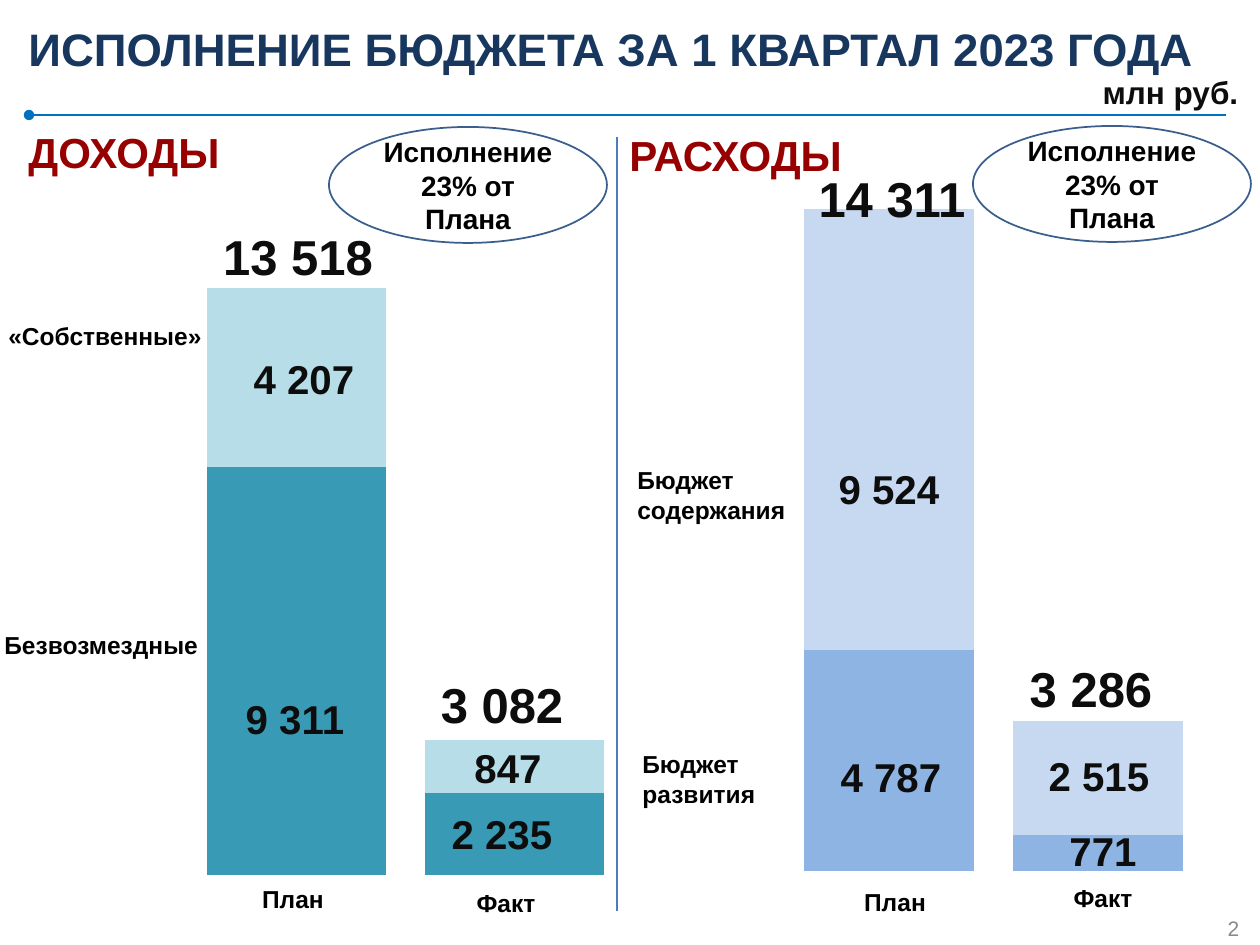
from lxml.etree import SubElement
from pptx import Presentation
from pptx.chart.data import CategoryChartData
from pptx.dml.color import RGBColor
from pptx.enum.chart import XL_CHART_TYPE as ChartType
from pptx.enum.shapes import MSO_CONNECTOR as Connector, MSO_SHAPE as Shape
from pptx.enum.text import MSO_ANCHOR as Anchor, PP_ALIGN as Align
from pptx.oxml import parse_xml
from pptx.oxml.ns import nsdecls, qn
from pptx.util import Pt

EMU_PER_PX = 914400 / 126
BLACK, INK, RED = "000000", "0D0D0D", "960000"

INCOME = {
    "heading": ("ДОХОДЫ", 16, 0),
    "ellipse": (329, 7, 278, 116),
    "chart": (178, 53, 455, 716),
    "layout": (0.02, 0.07, 0.96, 0.91),
    "maximum": 160,
    "gap": 22,
    "series": [((100, 20), "399AB5"), ((44, 13), "B7DEE8")],
    "totals": [("13 518", 298, 136), ("3 082", 502, 584)],
    "values": [("4 207", 304, 258), ("9 311", 295, 598),
               ("847", 508, 647), ("2 235", 502, 713)],
    "columns": [("План", 293, 779), ("Факт", 506, 783)],
    "rows": [("«Собственные»", -4, 186, 237), ("Безвозмездные", -8, 495, 237)],
}
SPENDING = {
    "heading": ("РАСХОДЫ", 0, 3),
    "ellipse": (356, 6, 278, 116),
    "chart": (167, 56, 455, 709),
    "layout": (0, 0.04, 0.92, 0.94),
    "maximum": 151,
    "gap": 23,
    "series": [((50, 8), "8EB4E3"), ((100, 26), "C6D9F1")],
    "totals": [("14 311", 275, 78), ("3 286", 474, 568)],
    "values": [("9 524", 272, 368), ("4 787", 274, 656),
               ("2 515", 482, 655), ("771", 486, 730)],
    "columns": [("План", 278, 782), ("Факт", 486, 778)],
    "rows": [("Бюджет\nсодержания", 8, 345, 179), ("Бюджет развития", 13, 629, 156)],
}


def px(*lengths):
    """Turn pixel lengths into a list of EMU."""
    return [round(length * EMU_PER_PX) for length in lengths]


def color(hex_string):
    """Turn a hex string into a colour."""
    return RGBColor.from_string(hex_string)


def write(shape, text, size=14, fill=BLACK, bold=True, align=Align.CENTER,
          anchor=Anchor.MIDDLE, wrap=True):
    """Fill a shape with text, one paragraph a line."""
    frame = shape.text_frame
    frame.word_wrap = wrap
    frame.vertical_anchor = anchor
    frame.text = text
    for paragraph in frame.paragraphs:
        paragraph.alignment = align
        font = paragraph.runs[0].font
        font.name, font.size, font.bold = "Arial", Pt(size), bold
        font.color.rgb = color(fill)


def add_text(slide, box, text, **style):
    """Add a text box at a pixel box."""
    write(slide.shapes.add_textbox(*px(*box)), text, **style)


def add_labels(slide, left, top, extent, labels, **style):
    """Add text boxes of one extent, centred on points relative to a corner."""
    width, height = extent
    for text, x, y in labels:
        box = (left + x - width / 2, top + y - height / 2, width, height)
        add_text(slide, box, text, **style)


def add_line(slide, start, end, stroke, weight, head=None):
    """Draw a straight line without shadow."""
    line = slide.shapes.add_connector(Connector.STRAIGHT, *px(*start, *end))
    line.line.color.rgb = color(stroke)
    line.line.width = Pt(weight)
    properties = line._element.spPr
    if head:
        SubElement(properties.find(qn("a:ln")), qn("a:headEnd"), type=head)
    SubElement(properties, qn("a:effectLst"))


def add_ellipse(slide, box, text):
    """Add the outlined ellipse with the execution rate."""
    ellipse = slide.shapes.add_shape(Shape.OVAL, *px(*box))
    ellipse.shadow.inherit = False
    ellipse.fill.solid()
    ellipse.fill.fore_color.rgb = color("FFFFFF")
    ellipse.line.color.rgb = color("3A5F8C")
    ellipse.line.width = Pt(1)
    write(ellipse, text, size=16)


def set_plot_layout(chart, layout):
    """Fix the inner plot area as fractions of the chart."""
    plot_area = chart._chartSpace.chart.plotArea
    for old in plot_area.findall(qn("c:layout")):
        plot_area.remove(old)
    sizes = "".join(f'<c:{name} val="{value}"/>' for name, value in zip("xywh", layout))
    plot_area.insert(0, parse_xml(
        f'<c:layout {nsdecls("c")}><c:manualLayout><c:layoutTarget val="inner"/>'
        f'<c:xMode val="edge"/><c:yMode val="edge"/>{sizes}'
        '</c:manualLayout></c:layout>'))


def add_stacked_chart(slide, box, series, gap, maximum, layout):
    """Add a stacked column chart with hidden axes."""
    data = CategoryChartData(number_format="#,##0")
    data.categories = ["1", "2"]
    for number, (values, _) in enumerate(series, 1):
        data.add_series(f"Series {number}", values)
    chart = slide.shapes.add_chart(ChartType.COLUMN_STACKED, *px(*box), data).chart
    chart.has_legend = chart.has_title = False
    chart.font.name, chart.font.size = "Calibri", Pt(10)
    chart.font.color.rgb = color(BLACK)
    chart.category_axis.visible = chart.value_axis.visible = False
    chart.value_axis.has_major_gridlines = False
    chart.value_axis.minimum_scale = 0
    chart.value_axis.maximum_scale = maximum
    plot = chart.plots[0]
    plot.gap_width, plot.overlap, plot.vary_by_categories = gap, 100, False
    for bars, (_, fill) in zip(plot.series, series):
        bars.format.fill.solid()
        bars.format.fill.fore_color.rgb = color(fill)
    set_plot_layout(chart, layout)


def add_header(slide, left, top, width):
    """Add the title, the unit and the rule below them."""
    add_text(slide, (left, top - 3, width, 102), "ИСПОЛНЕНИЕ БЮДЖЕТА ЗА 1 КВАРТАЛ 2023 ГОДА",
             size=26, fill="17375E", align=Align.LEFT)
    add_text(slide, (left + 1055, top + 57, 199, 69), "млн руб.", size=18, fill=INK)
    add_line(slide, (left + 13, top + 115), (left + 1210, top + 115), "0070C0", 1.25, "oval")


def add_panel(slide, left, top, panel):
    """Add one half of the budget: chart, labels, heading and rate."""
    def place(x, y, *size):
        """Move a box from the panel to the slide."""
        return (left + x, top + y, *size)

    add_stacked_chart(slide, place(*panel["chart"]), panel["series"],
                      panel["gap"], panel["maximum"], panel["layout"])
    heading, x, y = panel["heading"]
    add_text(slide, place(x, y, 241, 63), heading, size=24, fill=RED,
             align=Align.LEFT, anchor=Anchor.TOP, wrap=False)
    add_labels(slide, left, top, (200, 50), panel["totals"], size=28, fill=INK)
    add_labels(slide, left, top, (170, 88), panel["values"], size=23, fill=INK)
    add_labels(slide, left, top, (170, 42), panel["columns"])
    for text, x, y, width in panel["rows"]:
        add_text(slide, place(x, y, width, 59), text, align=Align.LEFT)
    add_ellipse(slide, place(*panel["ellipse"]), "Исполнение 23% от Плана")


def main():
    """Build and save the slide."""
    presentation = Presentation()
    presentation.slide_width, presentation.slide_height = px(1260, 945)
    slide = presentation.slides.add_slide(presentation.slide_layouts[6])
    add_header(slide, 16, 0, 1235)
    add_line(slide, (617, 137), (617, 911), "4B7EBC", 0.75)
    add_panel(slide, 617, 120, SPENDING)
    add_panel(slide, 0, 120, INCOME)
    add_text(slide, (1207, 911, 53, 34), "2", size=12, fill="898989", bold=False)
    presentation.save("out.pptx")


if __name__ == "__main__":
    main()
